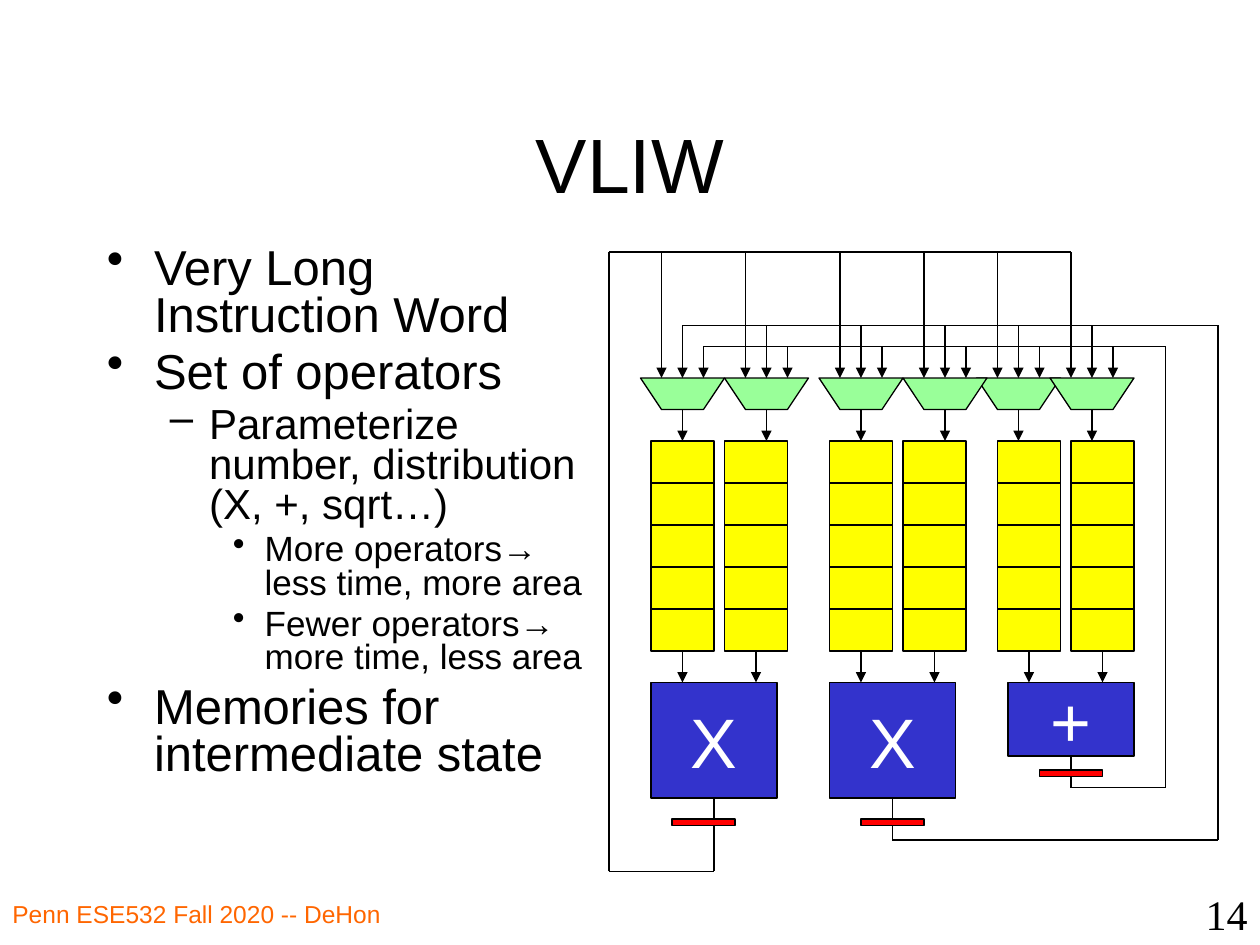
import pptx
import pptx.dml.color
import pptx.enum.shapes
import pptx.enum.text
import pptx.oxml
import pptx.oxml.ns
import pptx.util
from pptx.util import Cm

RGBColor = pptx.dml.color.RGBColor
BLACK = RGBColor(0x00, 0x00, 0x00)
WHITE = RGBColor(0xFF, 0xFF, 0xFF)
ORANGE = RGBColor(0xFF, 0x66, 0x00)
BLUE = RGBColor(0x33, 0x33, 0xCC)
YELLOW = RGBColor(0xFF, 0xFF, 0x00)
GREEN = RGBColor(0x99, 0xFF, 0x99)
RED = RGBColor(0xFF, 0x00, 0x00)

ALIGN = pptx.enum.text.PP_ALIGN
ANCHOR = pptx.enum.text.MSO_ANCHOR
RECTANGLE = pptx.enum.shapes.MSO_SHAPE.RECTANGLE
STRAIGHT = pptx.enum.shapes.MSO_CONNECTOR.STRAIGHT
BOTTOM, TOP = 2, 0

GRID_CM = 2.54 / 12
MUX_TOP, MUX_BOTTOM = 36, 39
MEMORY_TOP, CELL_HEIGHT, CELL_COUNT = 42, 4, 5
MEMORY_BOTTOM = MEMORY_TOP + CELL_HEIGHT * CELL_COUNT
OPERATOR_TOP = 65
BUS_ROWS = (24, 31, 33)

OPERATORS = [
    {"symbol": "+", "left": 96, "height": 7, "memories": (95, 102), "muxes": (93, 100),
     "register": (99, 73.33), "route": [(102, 75), (111, 75), (111, 33), (84, 33)]},
    {"symbol": "X", "left": 79, "height": 11, "memories": (79, 86), "muxes": (78, 86),
     "register": (82, 78), "route": [(85, 80), (116, 80), (116, 31), (82, 31)]},
    {"symbol": "X", "left": 62, "height": 11, "memories": (62, 69), "muxes": (61, 69),
     "register": (64, 78), "route": [(68, 83), (58, 83), (58, 24), (81, 24)]},
]
BUS_EXTENSIONS = [((80, 24), (102, 24)), ((83, 31), (65, 31)), ((85, 33), (67, 33))]

LEVELS = [
    {"bullet": "•", "size": 28, "left": 0.95, "hang": 0.95},
    {"bullet": "–", "size": 24, "left": 2.06, "hang": 0.79},
    {"bullet": "•", "size": 20, "left": 3.18, "hang": 0.64},
]
POINTS = [
    (0, "Very Long Instruction Word"),
    (0, "Set of operators"),
    (1, "Parameterize number, distribution (X, +, sqrt…)"),
    (2, "More operators→ less time, more area"),
    (2, "Fewer operators→ more time, less area"),
    (0, "Memories for intermediate state"),
]


def grid(*values):
    return [Cm(v * GRID_CM) for v in values]


def apply(target, values):
    for name, value in values.items():
        setattr(target, name, value)


def write(p, text, size, color, align=ALIGN.LEFT, font="Arial"):
    p.alignment = align
    r = p.add_run()
    r.text = text
    apply(r.font, {"name": font, "size": pptx.util.Pt(size)})
    r.font.color.rgb = color


def add_text(s, box, *style):
    tf = s.shapes.add_textbox(*grid(*box)).text_frame
    tf.word_wrap = True
    write(tf.paragraphs[0], *style)


def add_title(s, text):
    sp = s.shapes.title
    apply(sp, dict(zip(("left", "top", "width", "height"), grid(9, 8, 102, 15))))
    sp.text_frame.vertical_anchor = ANCHOR.MIDDLE
    write(sp.text_frame.paragraphs[0], text, 44, BLACK, ALIGN.CENTER)


def add_bullets(s):
    tf = s.shapes.add_textbox(*grid(9, 23, 50, 54)).text_frame
    tf.word_wrap = True
    for i, (level, text) in enumerate(POINTS):
        style = LEVELS[level]
        p = tf.add_paragraph() if i else tf.paragraphs[0]
        apply(p, {"level": level, "line_spacing": 0.8,
                  "space_before": pptx.util.Pt(style["size"] * 0.2)})
        write(p, text, style["size"], BLACK)
        pPr = p._p.get_or_add_pPr()
        pPr.set("marL", str(Cm(style["left"])))
        pPr.set("indent", str(-Cm(style["hang"])))
        bullet = pptx.oxml.parse_xml(
            f'<a:buChar {pptx.oxml.ns.nsdecls("a")} char="{style["bullet"]}"/>')
        pPr.append(bullet)


def paint(sp, color):
    sp.shadow.inherit = False
    sp.fill.solid()
    sp.fill.fore_color.rgb = color
    sp.line.color.rgb = BLACK
    sp.line.width = pptx.util.Pt(0.75)
    return sp


def add_block(s, left, top, width, height, color):
    return paint(s.shapes.add_shape(RECTANGLE, *grid(left, top, width, height)), color)


def add_mux(s, left):
    points = [(left, MUX_TOP), (left + 2, MUX_BOTTOM),
              (left + 6, MUX_BOTTOM), (left + 8, MUX_TOP)]
    start, *rest = [tuple(grid(*point)) for point in points]
    builder = s.shapes.build_freeform(*start)
    builder.add_line_segments(rest, close=True)
    paint(builder.convert_to_shape(), GREEN)


def add_wire(s, start, end, arrow=False, source=None, target=None):
    c = s.shapes.add_connector(STRAIGHT, *grid(*start, *end))
    c.line.color.rgb = BLACK
    c.line.width = pptx.util.Pt(0.75)
    ns = pptx.oxml.ns.nsdecls("a")
    if arrow:
        c.line._get_or_add_ln().append(
            pptx.oxml.parse_xml(f'<a:tailEnd {ns} type="triangle"/>'))
    c._element.spPr.append(pptx.oxml.parse_xml(f"<a:effectLst {ns}/>"))
    if source is not None:
        c.begin_connect(source, BOTTOM)
    if target is not None:
        c.end_connect(target, TOP)


def add_memory_path(s, memory, mux):
    cells = [add_block(s, memory, MEMORY_TOP + i * CELL_HEIGHT, 6, CELL_HEIGHT, YELLOW)
             for i in range(CELL_COUNT)]
    middle, mux_middle = memory + 3, mux + 4
    add_wire(s, (middle, MEMORY_BOTTOM), (middle, OPERATOR_TOP), True, source=cells[-1])
    add_mux(s, mux)
    add_wire(s, (mux_middle, MUX_BOTTOM), (mux_middle, MEMORY_TOP), True,
             target=cells[0] if mux_middle == middle else None)
    for offset, row in zip((2, 4, 6), BUS_ROWS):
        add_wire(s, (mux + offset, row), (mux + offset, MUX_TOP), True)


def add_operator(s, op):
    sp = add_block(s, op["left"], OPERATOR_TOP, 12, op["height"], BLUE)
    tf = sp.text_frame
    apply(tf, {"word_wrap": False, "vertical_anchor": ANCHOR.MIDDLE})
    write(tf.paragraphs[0], op["symbol"], 40, WHITE, ALIGN.CENTER)
    for memory, mux in zip(op["memories"], op["muxes"]):
        add_memory_path(s, memory, mux)
    route = [(op["left"] + 6, OPERATOR_TOP + op["height"])] + op["route"]
    for i, (start, end) in enumerate(zip(route, route[1:])):
        add_wire(s, start, end, source=None if i else sp)


def main():
    prs = pptx.Presentation()
    apply(prs, {"slide_width": Cm(25.4), "slide_height": Cm(19.05)})
    s = prs.slides.add_slide(prs.slide_layouts[5])
    add_title(s, "VLIW")
    add_bullets(s)
    add_text(s, (0, 85, 46, 5), "Penn ESE532 Fall 2020 -- DeHon", 14, ORANGE)
    add_text(s, (95, 84, 25, 6), "14", 24, BLACK, ALIGN.RIGHT, "Times New Roman")
    for op in OPERATORS:
        add_operator(s, op)
    for start, end in BUS_EXTENSIONS:
        add_wire(s, start, end)
    for op in OPERATORS:
        add_block(s, *op["register"], 6, 0.6, RED)
    prs.save("out.pptx")


if __name__ == "__main__":
    main()
